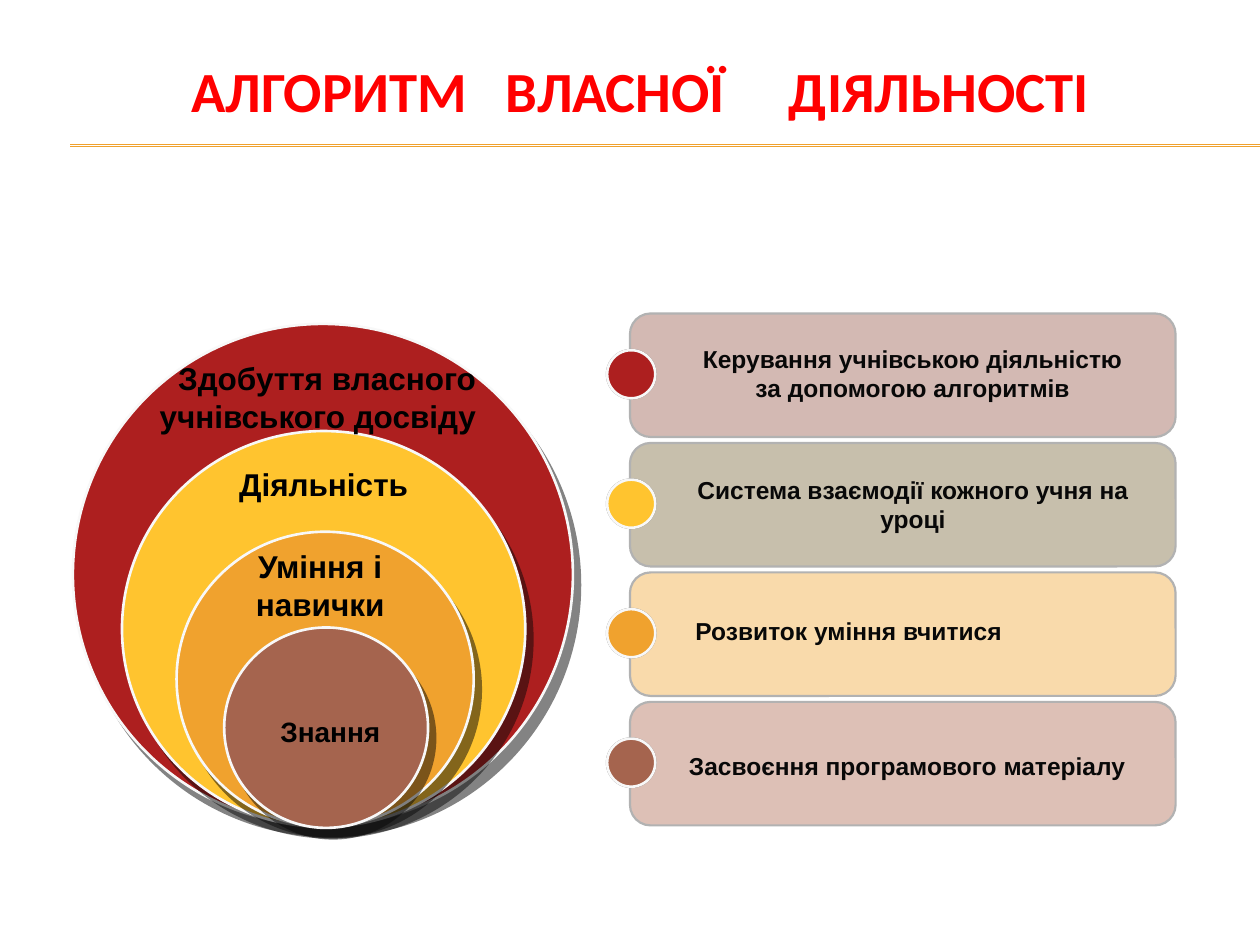
from dataclasses import dataclass

from lxml import etree
from pptx import Presentation
from pptx.dml.color import RGBColor
from pptx.enum.shapes import MSO_CONNECTOR, MSO_SHAPE
from pptx.enum.text import MSO_ANCHOR, PP_ALIGN
from pptx.oxml import parse_xml
from pptx.oxml.ns import nsdecls, qn
from pptx.util import Cm, Pt


@dataclass(frozen=True)
class Theme:
    title_font: str = "Calibri"
    body_font: str = "Arial"
    title: str = "FF0000"
    ring_text: str = "000000"
    card_text: str = "080808"
    rule: str = "F0A22E"
    ring_line: str = "F8F8F8"
    card_line: str = "B2B2B2"
    levels: tuple = ("AD1F1F", "FFC42F", "F0A22E", "A5644E")
    cards: tuple = ("D3B9B3", "C7BFAC", "F9DAAB", "DDC0B6")
    title_size: float = 32.4
    ring_size: int = 18
    core_size: int = 16
    card_size: int = 14


theme = Theme()


def add_panel(kind, box, fill, line, width, shadow=None):
    """Add a filled shape; shadow is (colour, distance in points, angle)."""
    panel = page.shapes.add_shape(kind, *map(Cm, box))
    panel.shadow.inherit = False
    panel.fill.solid()
    panel.fill.fore_color.rgb = RGBColor.from_string(fill)
    panel.line.color.rgb = RGBColor.from_string(line)
    panel.line.width = Pt(width)
    if shadow:
        colour, distance, angle = shadow
        effects = panel._element.spPr.find(qn("a:effectLst"))
        effects.append(parse_xml(
            f'<a:outerShdw {nsdecls("a")} blurRad="0" dist="{Pt(distance)}" '
            f'dir="{angle * 60000}" algn="ctr" rotWithShape="0">'
            f'<a:srgbClr val="{colour}"><a:alpha val="50000"/></a:srgbClr></a:outerShdw>'))
    return panel


def add_label(text, box, size, colour, align):
    label = page.shapes.add_textbox(*map(Cm, box))
    label.text_frame.word_wrap = True
    label.text_frame.text = text
    for para in label.text_frame.paragraphs:
        para.alignment = align
        for span in para.runs:
            span.font.name = theme.body_font
            span.font.size = Pt(size)
            span.font.bold = True
            span.font.color.rgb = RGBColor.from_string(colour)
    return label


deck = Presentation()
deck.slide_width, deck.slide_height = Cm(25.4), Cm(19.05)
page = deck.slides.add_slide(deck.slide_layouts[5])

# Double rule under the title
for y in (2.92, 2.95):
    rule = page.shapes.add_connector(MSO_CONNECTOR.STRAIGHT, Cm(1.42), Cm(y), Cm(25.4), Cm(y))
    rule.line.color.rgb = RGBColor.from_string(theme.rule)
    rule.line.width = Pt(0.75)
    etree.SubElement(rule._element.spPr, qn("a:effectLst"))

# Title, with the word gaps widened by letter spacing (hundredths of a point)
title = page.shapes.title
title.left, title.top, title.width, title.height = Cm(0.84), Cm(1.27), Cm(24.13), Cm(2.34)
frame = title.text_frame
frame.vertical_anchor = MSO_ANCHOR.MIDDLE
frame.margin_top, frame.margin_bottom = 0, Cm(1.27)
para = frame.paragraphs[0]
para.alignment = PP_ALIGN.CENTER
for text, spacing in (("АЛГОРИТМ", 0), (" ", 1460), ("ВЛАСНОЇ", 0),
                      (" ", 2930), ("ДІЯЛЬНОСТІ", 0)):
    span = para.add_run()
    span.text = text
    span.font.name = theme.title_font
    span.font.size = Pt(theme.title_size)
    span.font.bold = True
    span.font.color.rgb = RGBColor.from_string(theme.title)
    if spacing:
        span._r.get_or_add_rPr().set("spc", str(spacing))

# Cards on the right, each with a dot in the colour of its ring
card_top, card_step = 6.32, 2.61
for row, (card_fill, dot_fill) in enumerate(zip(theme.cards, theme.levels)):
    top = card_top + row * card_step
    add_panel(MSO_SHAPE.ROUNDED_RECTANGLE, (12.7, top, 11, 2.49),
              card_fill, theme.card_line, 1.25)
    add_panel(MSO_SHAPE.OVAL, (12.24, top + 0.74, 0.97, 0.97),
              dot_fill, theme.ring_line, 1.5, ("000000", 0, 0))

# Card texts
card_texts = (
    ("Керування учнівською діяльністю за допомогою алгоритмів",
     (13.74, 6.81, 9.32, 1.45), PP_ALIGN.CENTER, None),
    ("Система взаємодії кожного учня на уроці",
     (13.54, 9.45, 9.73, 1.45), PP_ALIGN.CENTER, None),
    ("Розвиток уміння вчитися", (13.77, 12.45, 9.32, 0.69), PP_ALIGN.LEFT, 0.7),
    ("Засвоєння програмового матеріалу", (13.64, 15.01, 9.73, 0.86), PP_ALIGN.LEFT, None),
)
for text, box, align, line_spacing in card_texts:
    label = add_label(text, box, theme.card_size, theme.card_text, align)
    label.text_frame.paragraphs[0].line_spacing = line_spacing

# Nested rings, from the outermost to the core
rings = ((1.47, 6.53, 10.08, 10.11), (2.46, 8.69, 8.13, 7.98),
         (3.56, 10.72, 5.99, 5.94), (4.52, 12.65, 4.11, 4.04))
for box, fill in zip(rings, theme.levels):
    add_panel(MSO_SHAPE.OVAL, box, fill, theme.ring_line, 1.5, ("080808", 7.2, 56))

# Ring texts
ring_texts = (
    ("Знання", (4.17, 14.27, 4.98, 0.94), theme.core_size),
    ("Уміння і навички", (3.84, 10.9, 5.23, 1.8), theme.ring_size),
    ("Діяльність", (3.91, 9.25, 5.23, 1.02), theme.ring_size),
)
for text, box, size in ring_texts:
    add_label(text, box, size, theme.ring_text, PP_ALIGN.CENTER)
outer = add_label("Здобуття власного\nучнівського досвіду", (2.46, 7.11, 9.09, 1.8),
                  theme.ring_size, theme.ring_text, PP_ALIGN.RIGHT)
outer.text_frame.margin_right = Cm(1.95)

deck.save("out.pptx")
